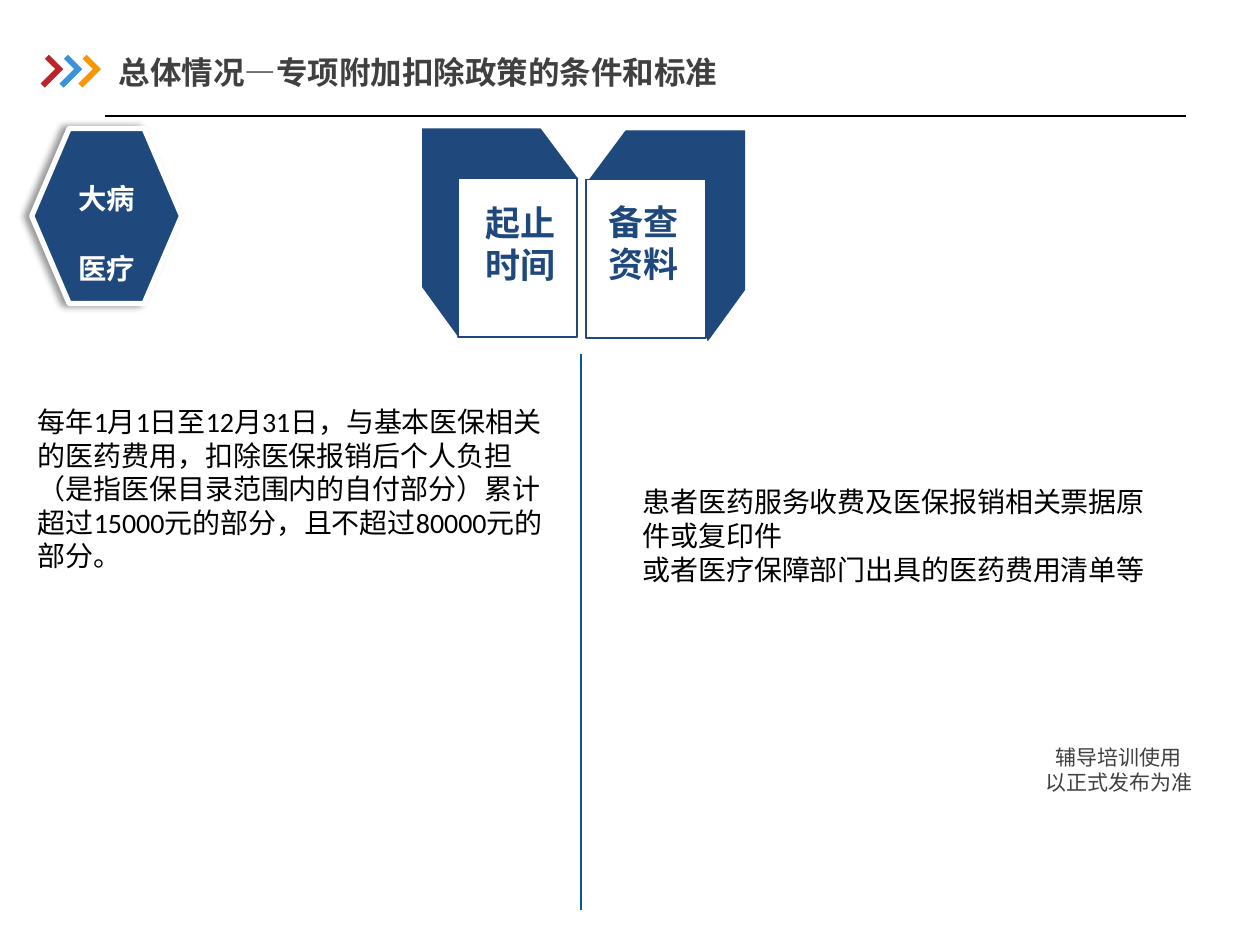
from dataclasses import dataclass
from lxml.etree import SubElement
from pptx import Presentation
from pptx.dml.color import RGBColor
from pptx.enum.shapes import MSO_CONNECTOR, MSO_SHAPE
from pptx.enum.text import MSO_ANCHOR, MSO_AUTO_SIZE, PP_ALIGN
from pptx.oxml.ns import qn
from pptx.util import Cm, Pt

HEX = {"navy": "1F497D", "blue": "3992DB", "gold": "F79600", "red": "BC242A",
       "grey": "404040", "rule": "005B9E", "black": "000000", "white": "FFFFFF"}
SANS, BODY = "Noto Sans CJK SC", "Calibri"


@dataclass
class Box:
    x: float
    y: float
    w: float
    h: float

    def cm(self) -> list:
        return [Cm(v) for v in (self.x, self.y, self.w, self.h)]


@dataclass
class Type:
    size: float
    color: str
    font: str = SANS
    bold: bool = False
    base: int = 0


@dataclass
class Panel:
    flap: list
    face: Box
    label: Box
    lines: list
    edge: bool


def tint(name: str) -> RGBColor:
    return RGBColor.from_string(HEX[name])


def paint(shape, fill: str, line: str = "", width: float = 0) -> None:
    shape.shadow.inherit = False
    shape.fill.solid()
    shape.fill.fore_color.rgb = tint(fill)
    if line:
        shape.line.color.rgb = tint(line)
        shape.line.width = Pt(width)
    else:
        shape.line.fill.background()


def write(shape, lines: list, kind: Type, align=PP_ALIGN.LEFT, lead: float = 1.0) -> None:
    frame = shape.text_frame
    for i, line in enumerate(lines):
        para = frame.paragraphs[0] if i == 0 else frame.add_paragraph()
        para.alignment, para.line_spacing = align, lead
        para.space_before = Pt(0)
        run = para.add_run()
        run.text = line
        font = run.font
        font.size, font.bold, font.name = Pt(kind.size), kind.bold, kind.font
        font.color.rgb = tint(kind.color)
        props = run._r.get_or_add_rPr()
        props.set("lang", "zh-CN")
        if kind.base:
            props.set("baseline", str(kind.base))
        SubElement(props, qn("a:ea")).set("typeface", SANS)


def place(shape, box: Box) -> None:
    shape.left, shape.top, shape.width, shape.height = box.cm()


def note(slide, box: Box, wrap: bool = True):
    shape = slide.shapes.add_textbox(*box.cm())
    shape.text_frame.word_wrap = wrap
    return shape


def rule(slide, x1: float, y1: float, x2: float, y2: float, color: str) -> None:
    line = slide.shapes.add_connector(MSO_CONNECTOR.STRAIGHT, Cm(x1), Cm(y1), Cm(x2), Cm(y2))
    line.line.color.rgb = tint(color)
    line.line.width = Pt(0.75)
    SubElement(line._element.spPr, qn("a:effectLst"))


def fold(slide, part: Panel) -> None:
    pts = [(Cm(x), Cm(y)) for x, y in part.flap]
    pen = slide.shapes.build_freeform(*pts[0])
    pen.add_line_segments(pts[1:], close=True)
    paint(pen.convert_to_shape(), "navy", "navy" if part.edge else "", 0.75)
    face = slide.shapes.add_shape(MSO_SHAPE.RECTANGLE, *part.face.cm())
    paint(face, "white", "navy", 1)
    write(note(slide, part.label, False), part.lines, Type(20, "navy", bold=True))


def cast(shape) -> None:
    shade = SubElement(shape._element.spPr.find(qn("a:effectLst")), qn("a:outerShdw"))
    for key, val in (("blurRad", Pt(4)), ("dist", Pt(3)), ("dir", 180 * 60000)):
        shade.set(key, str(int(val)))
    shade.set("algn", "r")
    shade.set("rotWithShape", "0")
    color = SubElement(shade, qn("a:srgbClr"))
    color.set("val", HEX["black"])
    SubElement(color, qn("a:alpha")).set("val", "40000")


def main() -> None:
    deck = Presentation()
    deck.slide_width, deck.slide_height = Cm(25.4), Cm(19.05)
    slide = deck.slides.add_slide(deck.slide_layouts[3])
    title, left, right = slide.placeholders

    # Title with chevrons and rule
    place(title, Box(2.39, 0.74, 13.11, 1.4))
    frame = title.text_frame
    frame.margin_left = frame.margin_right = 0
    frame.vertical_anchor = MSO_ANCHOR.MIDDLE
    frame.auto_size = MSO_AUTO_SIZE.NONE
    write(title, ["总体情况—专项附加扣除政策的条件和标准"], Type(18, "grey", bold=True))
    for i, color in enumerate(("red", "blue", "gold")):
        mark = slide.shapes.add_shape(MSO_SHAPE.CORNER, *Box(0.74 + 0.38 * i, 1.17, 0.41, 0.53).cm())
        mark.adjustments[0], mark.adjustments[1] = 0.28, 0.29
        mark.rotation = 225
        paint(mark, color)
    rule(slide, 2.11, 2.34, 23.9, 2.34, "black")

    # Folded panels, the second one mirrored
    flap = [(8.51, 2.59), (8.51, 5.79), (9.25, 6.81), (9.25, 3.61), (11.66, 3.61), (10.9, 2.59)]
    flip = [(23.52 - x, y + 0.05) for x, y in flap]
    fold(slide, Panel(flap, Box(9.23, 3.59, 2.41, 3.2), Box(9.53, 3.94, 1.93, 1.96),
                      ["起止", "时间"], False))
    fold(slide, Panel(flip, Box(11.82, 3.62, 2.41, 3.2), Box(12.01, 3.91, 1.93, 1.96),
                      ["备查", "资料"], True))

    # Topic badge
    badge = slide.shapes.add_shape(MSO_SHAPE.HEXAGON, *Box(0.64, 2.59, 3.02, 3.53).cm())
    paint(badge, "navy", "white", 3)
    cast(badge)
    write(note(slide, Box(0.81, 2.84, 2.67, 2.16)), ["大病", "医疗"],
          Type(28, "white", BODY, True, -3000), PP_ALIGN.CENTER, 1.2)

    # Two columns of body text
    rule(slide, 11.71, 7.14, 11.71, 18.34, "rule")
    texts = (
        (left, Box(0.51, 8.03, 11.15, 3.68),
         ["每年1月1日至12月31日，与基本医保相关的医药费用，扣除医保报销后个人负担"
          "（是指医保目录范围内的自付部分）累计超过15000元的部分，且不超过80000元的部分。"]),
        (right, Box(12.7, 9.65, 11.2, 2.31),
         ["患者医药服务收费及医保报销相关票据原件或复印件", "或者医疗保障部门出具的医药费用清单等"]),
    )
    for hold, box, lines in texts:
        place(hold, box)
        hold.text_frame.auto_size = MSO_AUTO_SIZE.NONE
        write(hold, lines, Type(16, "black", BODY))
        for para in hold.text_frame.paragraphs:
            props = para._p.get_or_add_pPr()
            props.set("marL", "0")
            props.set("indent", "0")
            SubElement(props, qn("a:buNone"))

    # Usage remark, first line indented
    hint = note(slide, Box(20.83, 14.88, 3.58, 1.27))
    write(hint, ["辅导培训使用以正式发布为准"], Type(12, "grey"))
    hint.text_frame.paragraphs[0]._p.get_or_add_pPr().set("indent", str(Cm(0.2)))

    deck.save("out.pptx")


if __name__ == "__main__":
    main()
